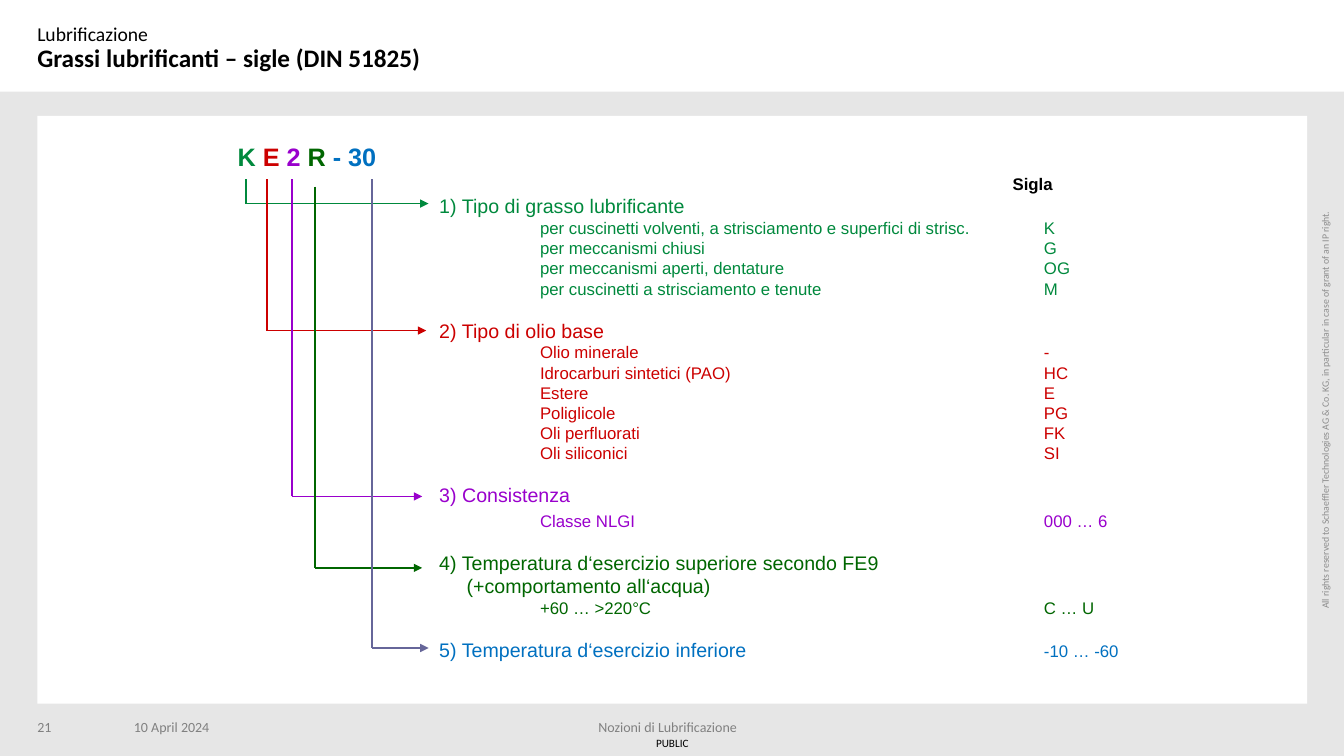
from pptx import Presentation, util as u
from pptx.dml.color import RGBColor
from pptx.enum import shapes, text
from pptx.oxml.ns import qn
from lxml import etree

GREEN = RGBColor(0x00, 0x89, 0x3D)
RED = RGBColor(0xCC, 0x00, 0x00)
PURPLE = RGBColor(0x99, 0x00, 0xCC)
DARK_GREEN = RGBColor(0x00, 0x66, 0x00)
BLUE = RGBColor(0x00, 0x70, 0xC0)
SLATE = RGBColor(0x66, 0x66, 0x99)
BLACK = RGBColor(0x00, 0x00, 0x00)
WHITE = RGBColor(0xFF, 0xFF, 0xFF)
BACKGROUND = RGBColor(0xE6, 0xE6, 0xE6)
FOOTER_GRAY = RGBColor(0x80, 0x80, 0x80)
RIGHTS_GRAY = RGBColor(0x8C, 0x8C, 0x8C)

LEFT, CENTER = text.PP_ALIGN.LEFT, text.PP_ALIGN.CENTER
TOP, MIDDLE, BOTTOM = text.MSO_ANCHOR.TOP, text.MSO_ANCHOR.MIDDLE, text.MSO_ANCHOR.BOTTOM

TITLE = "Grassi lubrificanti – sigle (DIN 51825)"
RIGHTS = ("All rights reserved to Schaeffler Technologies AG & Co. KG, "
          "in particular in case of grant of an IP right.")
PANELS = [(0, 0, 33.87, 2.31), (0.94, 2.92, 32, 14.81)]
LABELS = [
    ("Lubrificazione", (0.94, 0.53, 20.24, 0.61), 14, BLACK, LEFT, BOTTOM, 0),
    ("21", (0.94, 18.11, 0.99, 0.51), 10, FOOTER_GRAY, LEFT, TOP, 0),
    ("10 April 2024", (2.13, 18.11, 4.39, 0.51), 10, FOOTER_GRAY, CENTER, TOP, 0),
    ("Nozioni di Lubrificazione", (6.73, 18.11, 20.19, 0.51), 10, FOOTER_GRAY, CENTER, TOP, 0),
    ("PUBLIC", (16.21, 18.57, 1.47, 0.33), 8, BLACK, CENTER, MIDDLE, 0),
    (RIGHTS, (26.39, 9.88, 14, 0.91), 7, RIGHTS_GRAY, CENTER, MIDDLE, 270),
]
CODE = [("K ", GREEN), ("E ", RED), ("2 ", PURPLE), ("R ", DARK_GREEN), ("- 30", BLUE)]
SECTIONS = [
    (GREEN, "1) Tipo di grasso lubrificante", "", "", 0, [
        ("per cuscinetti volventi, a strisciamento e superfici di strisc.", "K"),
        ("per meccanismi chiusi", "G"),
        ("per meccanismi aperti, dentature", "OG"),
        ("per cuscinetti a strisciamento e tenute", "M")]),
    (RED, "2) Tipo di olio base", "", "", 0, [
        ("Olio minerale", "-"),
        ("Idrocarburi sintetici (PAO)", "HC"),
        ("Estere", "E"),
        ("Poliglicole", "PG"),
        ("Oli perfluorati", "FK"),
        ("Oli siliconici", "SI")]),
    (PURPLE, "3) Consistenza", "", "", 2.5, [("Classe NLGI", "000 … 6")]),
    (DARK_GREEN, "4) Temperatura d‘esercizio superiore secondo FE9",
     "(+comportamento all‘acqua)", "", 0, [("+60 … >220°C", "C … U")]),
    (BLUE, "5) Temperatura d‘esercizio inferiore", "", "-10 … -60", 0, []),
]
ARROWS = [
    (GREEN, 6.2, 4.52, 5.13, 10.8),
    (RED, 6.73, 4.52, 8.33, 10.74),
    (PURPLE, 7.35, 4.52, 12.51, 10.64),
    (DARK_GREEN, 7.94, 4.7, 14.31, 10.64),
    (SLATE, 9.37, 4.52, 16.33, 10.8),
]
HEADING_TAB, SUBHEADING_TAB, ITEM_TAB = 5.08, 5.77, 7.62
COLUMN_TAB, SYMBOL_TAB = 19.53, 20.32
SECTION_GAP = 14.4


def place(shape, box):
    shape.left, shape.top, shape.width, shape.height = [u.Cm(value) for value in box]


def style(run, size, color, bold=False, name="Arial"):
    run.font.name, run.font.size, run.font.bold = name, u.Pt(size), bold
    run.font.color.rgb = color


def format_label(shape, wording, size, color, align, anchor, bold=False):
    frame = shape.text_frame
    frame.text = wording
    frame.word_wrap = True
    frame.auto_size = text.MSO_AUTO_SIZE.NONE
    frame.vertical_anchor = anchor
    frame.margin_left = frame.margin_right = frame.margin_top = frame.margin_bottom = 0
    paragraph = frame.paragraphs[0]
    paragraph.alignment = align
    style(paragraph.runs[0], size, color, bold, "Calibri")


def add_line(slide, start, end, color, arrow=False):
    points = [u.Cm(value) for value in start + end]
    line = slide.shapes.add_connector(shapes.MSO_CONNECTOR.STRAIGHT, *points)
    line.line.color.rgb = color
    line.line.width = u.Pt(1.25)
    if arrow:
        etree.SubElement(line.line._get_or_add_ln(), qn("a:tailEnd"), type="triangle")
    etree.SubElement(line.element.spPr, qn("a:effectLst"))


def add_row(frame, tabs, pieces, before=0):
    paragraph = frame.add_paragraph()
    paragraph.space_before = u.Pt(before)
    tab_list = etree.SubElement(paragraph._p.get_or_add_pPr(), qn("a:tabLst"))
    for position in tabs:
        etree.SubElement(tab_list, qn("a:tab"), pos=str(u.Cm(position)), algn="l")
    for wording, size, color, bold in pieces:
        run = paragraph.add_run()
        run.text = "\t" + wording
        style(run, size, color, bold)


def add_key(slide):
    box = slide.shapes.add_textbox(0, 0, 0, 0)
    place(box, (5.74, 3.43, 22.94, 13.51))
    frame = box.text_frame
    frame.word_wrap = True
    for wording, color in CODE:
        run = frame.paragraphs[0].add_run()
        run.text = wording
        style(run, 18, color, True)
    add_row(frame, [COLUMN_TAB], [("Sigla", 12, BLACK, True)], 2)
    for index, (color, heading, subheading, symbol, item_gap, items) in enumerate(SECTIONS):
        pieces = [(heading, 14, color, False)]
        if symbol:
            pieces.append((symbol, 12, color, False))
        add_row(frame, [HEADING_TAB, SYMBOL_TAB], pieces, SECTION_GAP if index else 0)
        if subheading:
            add_row(frame, [SUBHEADING_TAB], [(subheading, 14, color, False)])
        for item in items:
            add_row(frame, [ITEM_TAB, SYMBOL_TAB],
                    [(wording, 12, color, False) for wording in item], item_gap)


def main():
    """Build the slide that explains the DIN 51825 grease codes."""
    presentation = Presentation()
    presentation.slide_width, presentation.slide_height = u.Cm(33.87), u.Cm(19.05)
    slide = presentation.slides.add_slide(presentation.slide_layouts[5])
    slide.background.fill.solid()
    slide.background.fill.fore_color.rgb = BACKGROUND

    for box in PANELS:
        panel = slide.shapes.add_shape(shapes.MSO_SHAPE.RECTANGLE, 0, 0, 0, 0)
        place(panel, box)
        panel.shadow.inherit = False
        panel.fill.solid()
        panel.fill.fore_color.rgb = WHITE
        panel.line.fill.background()

    title = slide.shapes.title
    title.element.getparent().append(title.element)
    place(title, (0.94, 1.14, 26.01, 0.71))
    format_label(title, TITLE, 18, BLACK, LEFT, BOTTOM, True)
    title.text_frame.paragraphs[0].line_spacing = 0.9

    for wording, box, size, color, align, anchor, rotation in LABELS:
        label = slide.shapes.add_textbox(0, 0, 0, 0)
        place(label, box)
        label.rotation = rotation
        format_label(label, wording, size, color, align, anchor)

    add_key(slide)
    for color, x, top, bottom, tip in ARROWS:
        add_line(slide, (x, top), (x, bottom), color)
        add_line(slide, (x, bottom), (tip, bottom), color, True)
    presentation.save("out.pptx")


if __name__ == "__main__":
    main()
